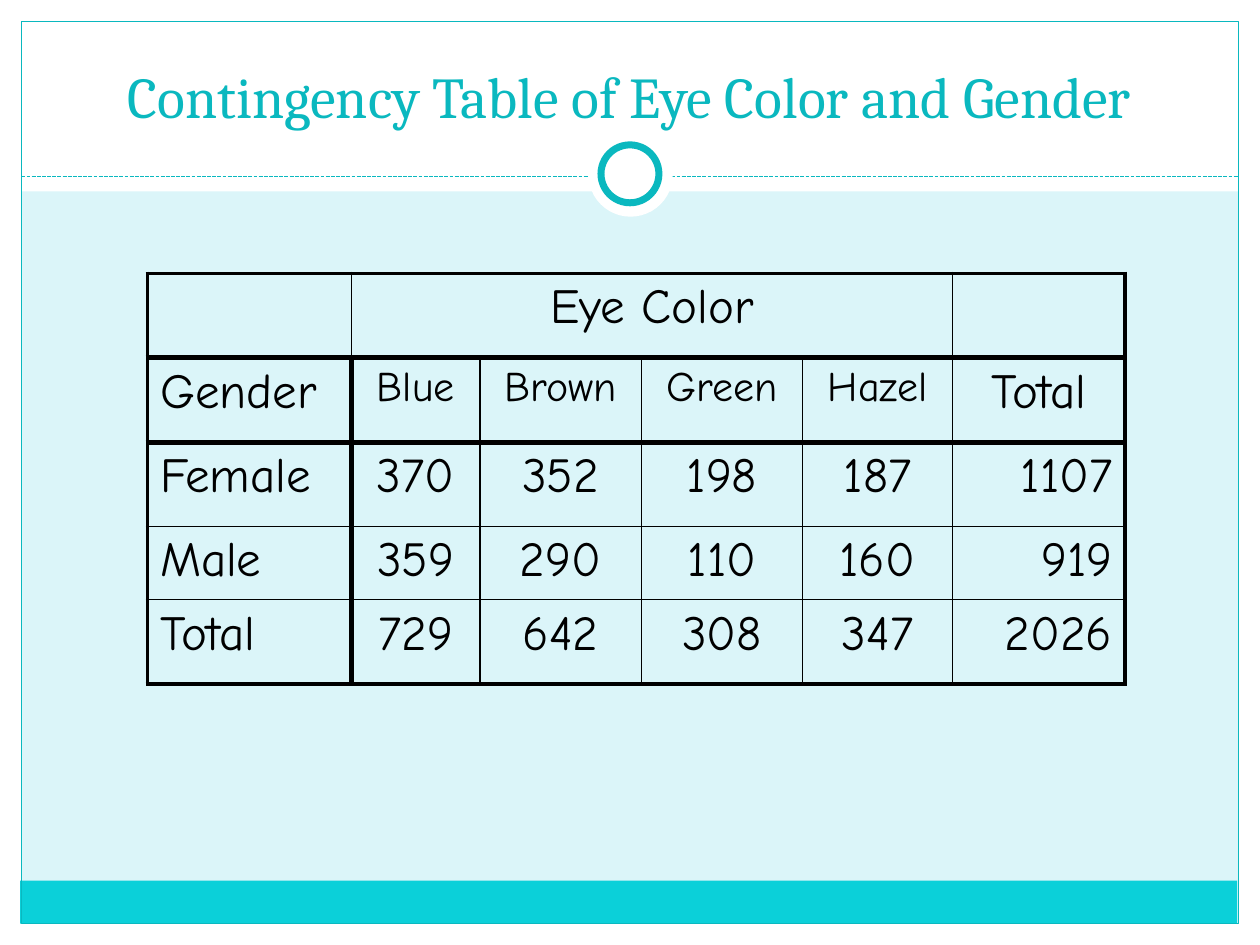
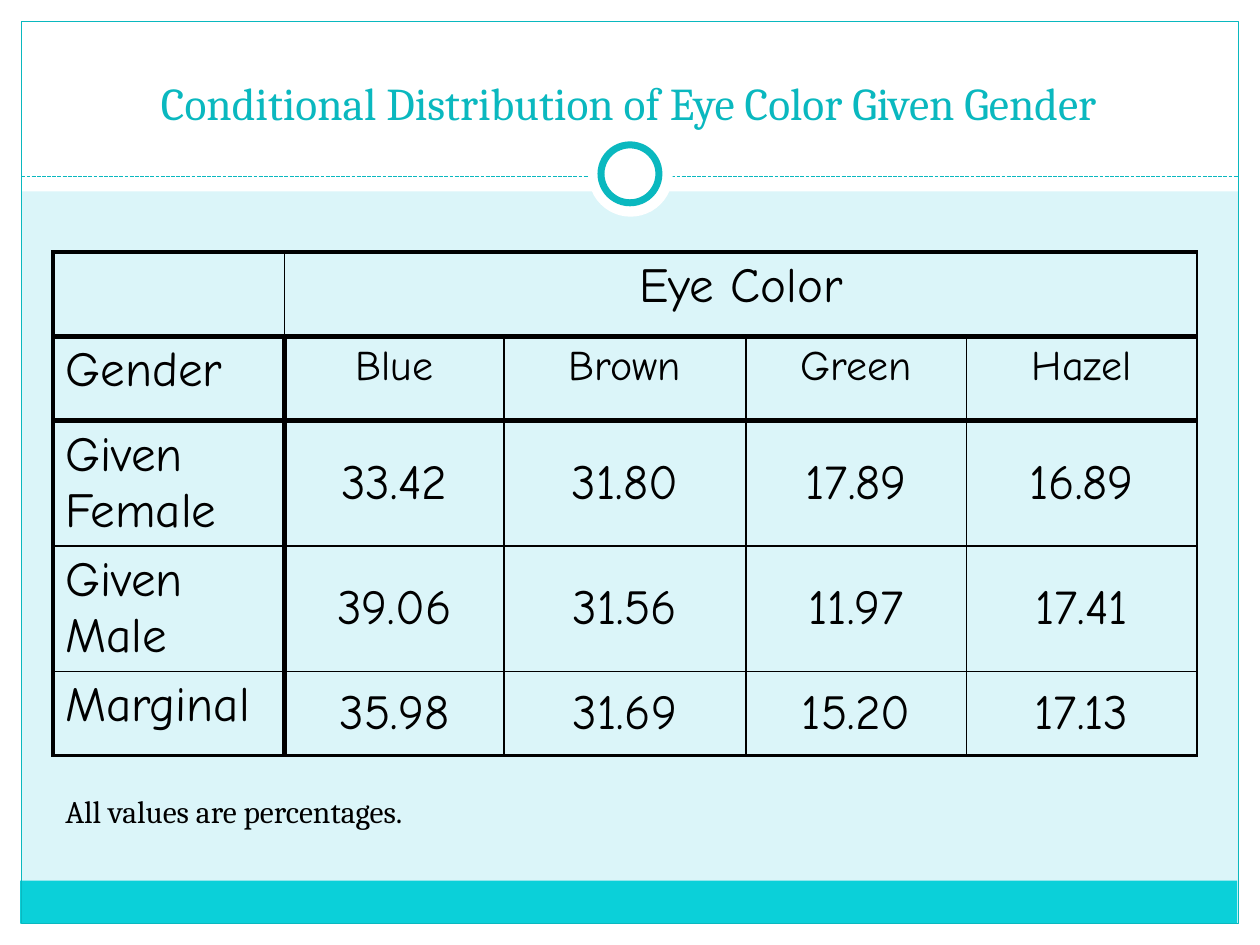
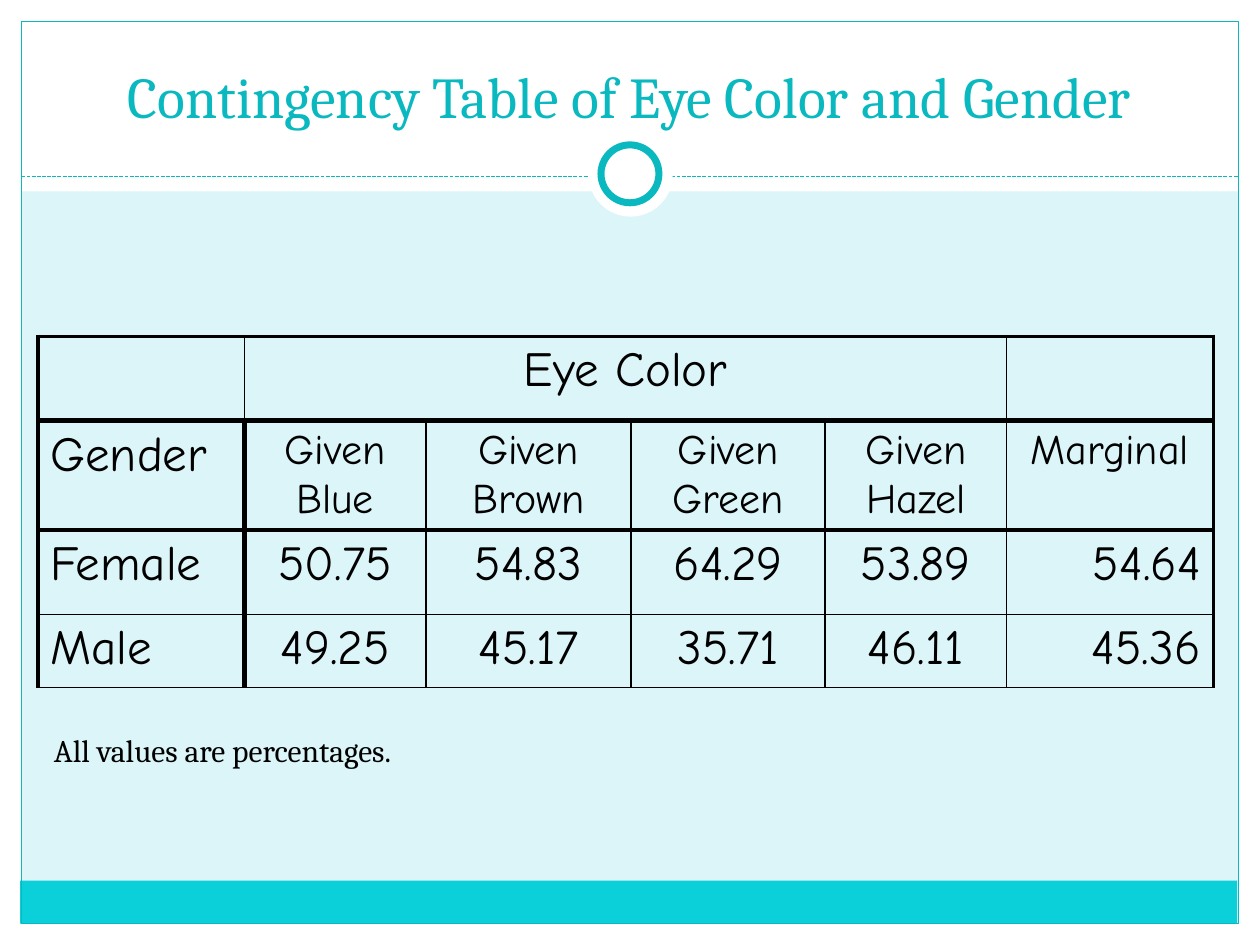
from lxml.etree import Element, SubElement
from pptx import Presentation
from pptx.dml.color import RGBColor
from pptx.enum.dml import MSO_LINE
from pptx.enum.shapes import MSO_CONNECTOR, MSO_SHAPE
from pptx.enum.text import MSO_ANCHOR, MSO_AUTO_SIZE, PP_ALIGN
from pptx.oxml.ns import qn
from pptx.util import Inches, Pt

COLORS = {
    "background": "DBF5F9",
    "white": "FFFFFF",
    "band": "0BD0D9",
    "accent": "0AB8BF",
    "text": "000000",
}
TITLE_FONT = "Cambria"
TABLE_FONT = "Comic Neue"
TABLE_SLIDES = [
    {
        "title": "Contingency Table of Eye Color and Gender",
        "title_size": 33,
        "position": (1.17, 2.17),
        "columns": [1.62, 1.02, 1.28, 1.28, 1.19, 1.37],
        "rows": [0.67, 0.67, 0.67, 0.58, 0.67],
        "values": [
            ["", "Eye Color", "", "", "", ""],
            ["Gender", "Blue", "Brown", "Green", "Hazel", "Total"],
            ["Female", "370", "352", "198", "187", "1107"],
            ["Male", "359", "290", "110", "160", "919"],
            ["Total", "729", "642", "308", "347", "2026"],
        ],
        "right_edge": 2.25,
        "bottom_edge": 2.25,
        "number_anchor": MSO_ANCHOR.TOP,
        "caption": None,
    },
    {
        "title": "Conditional Distribution of Eye Color Given Gender",
        "title_size": 26,
        "position": (0.42, 2),
        "columns": [1.84, 1.74, 1.92, 1.75, 1.83],
        "rows": [0.67, 0.67, 0.67, 0.58, 0.67],
        "values": [
            ["", "Eye Color", "", "", ""],
            ["Gender", "Blue", "Brown", "Green", "Hazel"],
            ["Given Female", "33.42", "31.80", "17.89", "16.89"],
            ["Given Male", "39.06", "31.56", "11.97", "17.41"],
            ["Marginal", "35.98", "31.69", "15.20", "17.13"],
        ],
        "right_edge": 1,
        "bottom_edge": 2.25,
        "number_anchor": MSO_ANCHOR.MIDDLE,
        "caption": (0.42, 6.24),
    },
    {
        "title": "Contingency Table of Eye Color and Gender",
        "title_size": 33,
        "position": (0.3, 2.67),
        "columns": [1.64, 1.44, 1.63, 1.54, 1.44, 1.64],
        "rows": [0.67, 0.67, 0.67, 0.58],
        "values": [
            ["", "Eye Color", "", "", "", ""],
            ["Gender", "Given Blue", "Given Brown", "Given Green", "Given Hazel", "Marginal"],
            ["Female", "50.75", "54.83", "64.29", "53.89", "54.64"],
            ["Male", "49.25", "45.17", "35.71", "46.11", "45.36"],
        ],
        "right_edge": 2.25,
        "bottom_edge": 1,
        "number_anchor": MSO_ANCHOR.TOP,
        "caption": (0.33, 5.75),
    },
]


def format_text(paragraph, font_name, size, color):
    for run in paragraph.runs:
        run.font.name = font_name
        run.font.size = Pt(size)
        run.font.color.rgb = RGBColor.from_string(COLORS[color])


def set_borders(cell, widths):
    properties = cell._tc.get_or_add_tcPr()
    for index, (side, width) in enumerate(zip("LRTB", widths)):
        border = Element(qn(f"a:ln{side}"), w=str(Pt(width)))
        fill = SubElement(border, qn("a:solidFill"))
        SubElement(fill, qn("a:srgbClr"), val=COLORS["text"])
        properties.insert(index, border)


presentation = Presentation()
presentation.slide_width = Inches(10)
presentation.slide_height = Inches(7.5)

layout = presentation.slide_layouts.get_by_name("Title Only")
layout.background.fill.solid()
layout.background.fill.fore_color.rgb = RGBColor.from_string(COLORS["background"])
layout_title, *layout_footers = layout.placeholders
for footer in layout_footers:
    footer.element.getparent().remove(footer.element)
layout_title.left, layout_title.top = Inches(0.33), Inches(0.25)
layout_title.width, layout_title.height = Inches(9.33), Inches(0.83)
layout_title.text_frame.vertical_anchor = MSO_ANCHOR.BOTTOM

slides = [presentation.slides.add_slide(layout) for _ in TABLE_SLIDES]

drawing = slides[0].shapes
decorations = []
for kind, left, top, width, height, fill, line_width in [
    (MSO_SHAPE.RECTANGLE, 0, 7.33, 10, 0.17, "white", 0),
    (MSO_SHAPE.RECTANGLE, 0, 0, 10, 1.52, "white", 0),
    (MSO_SHAPE.RECTANGLE, 0, 0, 0.17, 7.5, "white", 0),
    (MSO_SHAPE.RECTANGLE, 9.83, 0, 0.17, 7.5, "white", 0),
    (MSO_SHAPE.RECTANGLE, 0.16, 6.99, 9.66, 0.34, "band", 0),
    (MSO_SHAPE.RECTANGLE, 0.17, 0.17, 9.66, 7.16, None, 0.75),
    (MSO_SHAPE.OVAL, 4.67, 1.05, 0.67, 0.67, "white", 0),
    (MSO_SHAPE.OVAL, 4.77, 1.15, 0.46, 0.46, "white", 4),
]:
    shape = drawing.add_shape(kind, Inches(left), Inches(top), Inches(width), Inches(height))
    shape.shadow.inherit = False
    if fill:
        shape.fill.solid()
        shape.fill.fore_color.rgb = RGBColor.from_string(COLORS[fill])
    else:
        shape.fill.background()
    if line_width:
        shape.line.color.rgb = RGBColor.from_string(COLORS["accent"])
        shape.line.width = Pt(line_width)
    else:
        shape.line.fill.background()
    decorations.append(shape)

divider = drawing.add_connector(
    MSO_CONNECTOR.STRAIGHT, Inches(0.17), Inches(1.4), Inches(9.83), Inches(1.4)
)
divider.line.color.rgb = RGBColor.from_string(COLORS["accent"])
divider.line.width = Pt(0.75)
divider.line.dash_style = MSO_LINE.SQUARE_DOT
SubElement(divider.element.spPr, qn("a:effectLst"))
decorations.insert(6, divider)

for index, decoration in enumerate(decorations, start=2):
    layout.shapes.element.insert(index, decoration.element)

for slide, content in zip(slides, TABLE_SLIDES):
    title_frame = slide.shapes.title.text_frame
    title_frame.text = content["title"]
    title_frame.auto_size = MSO_AUTO_SIZE.NONE
    title_frame.paragraphs[0].alignment = PP_ALIGN.CENTER
    format_text(title_frame.paragraphs[0], TITLE_FONT, content["title_size"], "accent")

    columns, rows = content["columns"], content["rows"]
    left, top = content["position"]
    table = slide.shapes.add_table(
        len(rows), len(columns), Inches(left), Inches(top),
        Inches(sum(columns)), Inches(sum(rows)),
    ).table
    table.first_row = False
    table.horz_banding = False
    for column, width in zip(table.columns, columns):
        column.width = Inches(width)
    for row, height in zip(table.rows, rows):
        row.height = Inches(height)
    table.cell(0, 1).merge(table.cell(0, 4))

    horizontal = [2.25, 3, 3] + [1] * (len(rows) - 3) + [content["bottom_edge"]]
    for row_index, values in enumerate(content["values"]):
        label_edge = 1 if row_index == 0 else 3
        vertical = [2.25, label_edge] + [1] * (len(columns) - 2) + [content["right_edge"]]
        for column_index, value in enumerate(values):
            cell = table.cell(row_index, column_index)
            cell.fill.background()
            set_borders(cell, vertical[column_index:column_index + 2]
                        + horizontal[row_index:row_index + 2])
            if not value:
                continue
            cell.text_frame.text = value
            paragraph = cell.text_frame.paragraphs[0]
            if column_index == 0:
                paragraph.alignment = PP_ALIGN.LEFT
            elif column_index == 5 and row_index > 1:
                paragraph.alignment = PP_ALIGN.RIGHT
            else:
                paragraph.alignment = PP_ALIGN.CENTER
            if row_index > 1 and column_index > 0:
                cell.vertical_anchor = content["number_anchor"]
            spacing = SubElement(paragraph._p.get_or_add_pPr(), qn("a:spcBef"))
            SubElement(spacing, qn("a:spcPct"), val="20000")
            is_color_heading = row_index == 1 and column_index > 0 and value != "Total"
            format_text(paragraph, TABLE_FONT, 24 if is_color_heading else 28, "text")

    if content["caption"]:
        left, top = content["caption"]
        caption = slide.shapes.add_textbox(Inches(left), Inches(top), Inches(9.08), Inches(0.42))
        caption.text_frame.word_wrap = True
        caption.text_frame.auto_size = MSO_AUTO_SIZE.SHAPE_TO_FIT_TEXT
        caption.text_frame.text = "All values are percentages."
        format_text(caption.text_frame.paragraphs[0], TITLE_FONT, 18, "text")

presentation.save("out.pptx")
